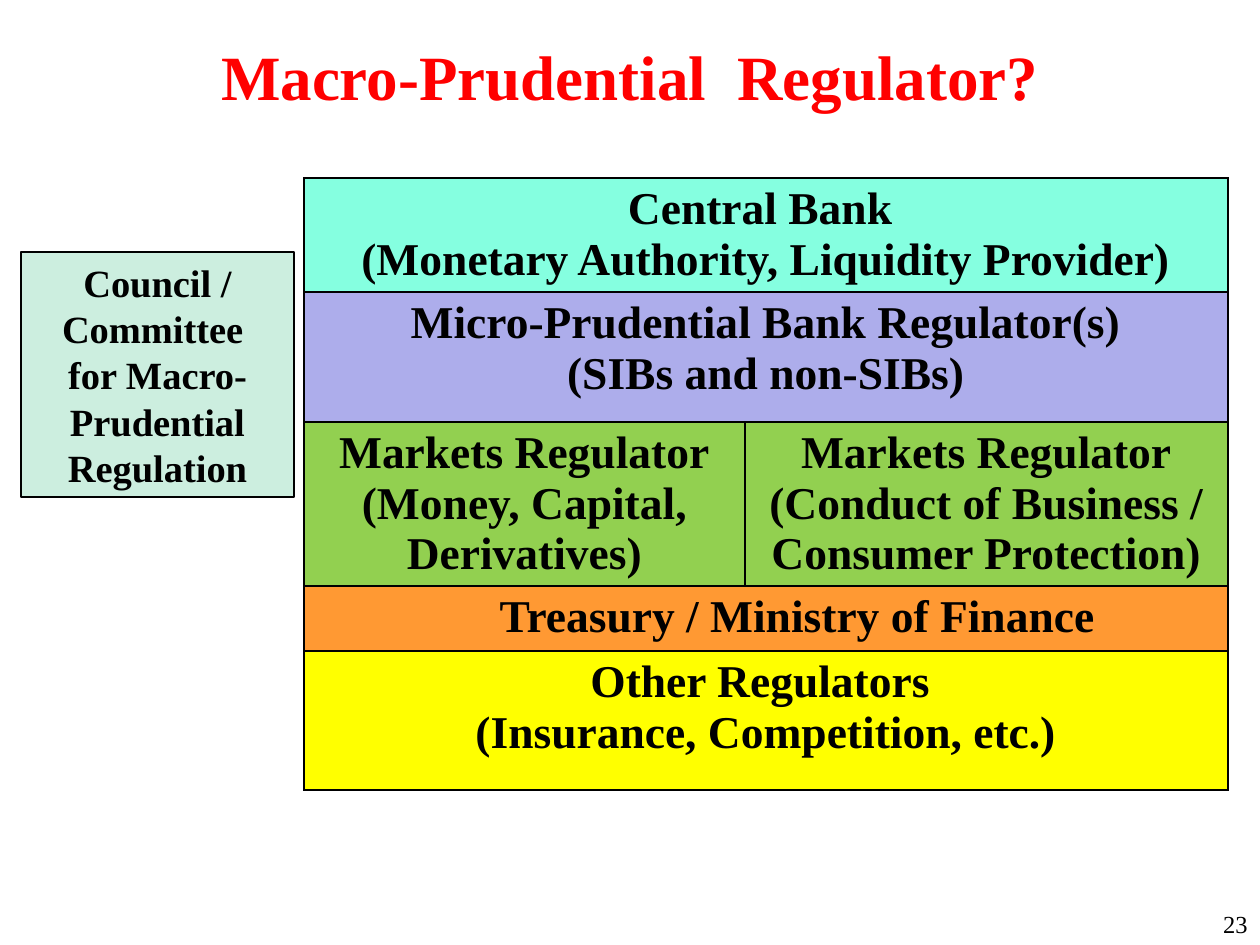
from pptx import Presentation
from pptx.dml.color import RGBColor
from pptx.enum.shapes import MSO_SHAPE as Shape
from pptx.enum.text import PP_ALIGN as Align
from pptx.oxml import parse_xml
from pptx.oxml.ns import nsdecls
from pptx.util import Emu, Pt

BLACK = RGBColor(0x00, 0x00, 0x00)
RED = RGBColor(0xFF, 0x00, 0x00)
AQUA = RGBColor(0x85, 0xFF, 0xE0)
LAVENDER = RGBColor(0xAD, 0xAD, 0xEB)
GREEN = RGBColor(0x92, 0xD0, 0x50)
ORANGE = RGBColor(0xFF, 0x99, 0x33)
YELLOW = RGBColor(0xFF, 0xFF, 0x00)
MINT = RGBColor(0xCC, 0xEE, 0xDF)

FONT = "Times New Roman"
PX = 914400 // 126
TITLE = ["Macro-Prudential  Regulator?"]
COUNCIL = ["Council /", "Committee ", "for Macro-Prudential Regulation"]
PAGE = ["23"]
COLUMNS = [441, 483]
REGULATORS = [
    (114, AQUA, 0, [["Central Bank ", "(Monetary Authority, Liquidity Provider)"]]),
    (130, LAVENDER, 0, [["Micro-Prudential Bank Regulator(s)", "(SIBs and non-SIBs)"]]),
    (164, GREEN, 0, [["Markets Regulator", "(Money, Capital, Derivatives)"],
                     ["Markets Regulator", "(Conduct of Business / Consumer Protection)"]]),
    (65, ORANGE, 1, [["Treasury / Ministry of Finance"]]),
    (139, YELLOW, 0, [["Other Regulators ", "(Insurance, Competition, etc.)"]]),
]


def px(*lengths):
    return [Emu(length * PX) for length in lengths]


def write(frame, lines, size, color=BLACK, bold=True, align=Align.CENTER, level=0):
    frame.word_wrap = True
    frame.text = "\n".join(lines)
    for paragraph in frame.paragraphs:
        paragraph.alignment = align
        if level:
            paragraph.level = level
            paragraph._p.get_or_add_pPr().set("marL", str(level * 63 * PX))
        font = paragraph.font
        font.name, font.size, font.bold = FONT, Pt(size), bold
        font.color.rgb = color


def add_borders(cell):
    properties = cell._tc.get_or_add_tcPr()
    for index, side in enumerate(("lnL", "lnR", "lnT", "lnB")):
        properties.insert(index, parse_xml(
            f'<a:{side} {nsdecls("a")} w="12700"><a:solidFill>'
            f'<a:srgbClr val="{BLACK}"/></a:solidFill></a:{side}>'))


def add_regulators(slide):
    heights = [row[0] for row in REGULATORS]
    table = slide.shapes.add_table(len(heights), len(COLUMNS),
                                   *px(304, 178, sum(COLUMNS), sum(heights))).table
    table.first_row = table.horz_banding = False
    for column, width in zip(table.columns, px(*COLUMNS)):
        column.width = width
    for row, (height, color, level, bodies) in enumerate(REGULATORS):
        table.rows[row].height = px(height)[0]
        cells = [table.cell(row, column) for column in range(len(COLUMNS))]
        for cell in cells:
            cell.fill.solid()
            cell.fill.fore_color.rgb = color
            add_borders(cell)
        if len(bodies) == 1:
            cells[0].merge(cells[-1])
        for cell, lines in zip(cells, bodies):
            write(cell.text_frame, lines, 26, level=level)


def add_council(slide):
    council = slide.shapes.add_shape(Shape.RECTANGLE, *px(21, 252, 273, 245))
    council.shadow.inherit = False
    council.fill.solid()
    council.fill.fore_color.rgb = MINT
    council.line.color.rgb = BLACK
    council.line.width = Pt(0.75)
    write(council.text_frame, COUNCIL, 22)


def main():
    deck = Presentation()
    deck.slide_width, deck.slide_height = px(1260, 945)
    slide = deck.slides.add_slide(deck.slide_layouts[6])
    add_regulators(slide)
    add_council(slide)
    title = slide.shapes.add_textbox(*px(0, 31, 1260, 90))
    write(title.text_frame, TITLE, 36, RED)
    page = slide.shapes.add_textbox(*px(1197, 903, 63, 42))
    write(page.text_frame, PAGE, 14, bold=False, align=Align.RIGHT)
    deck.save("out.pptx")


if __name__ == "__main__":
    main()
